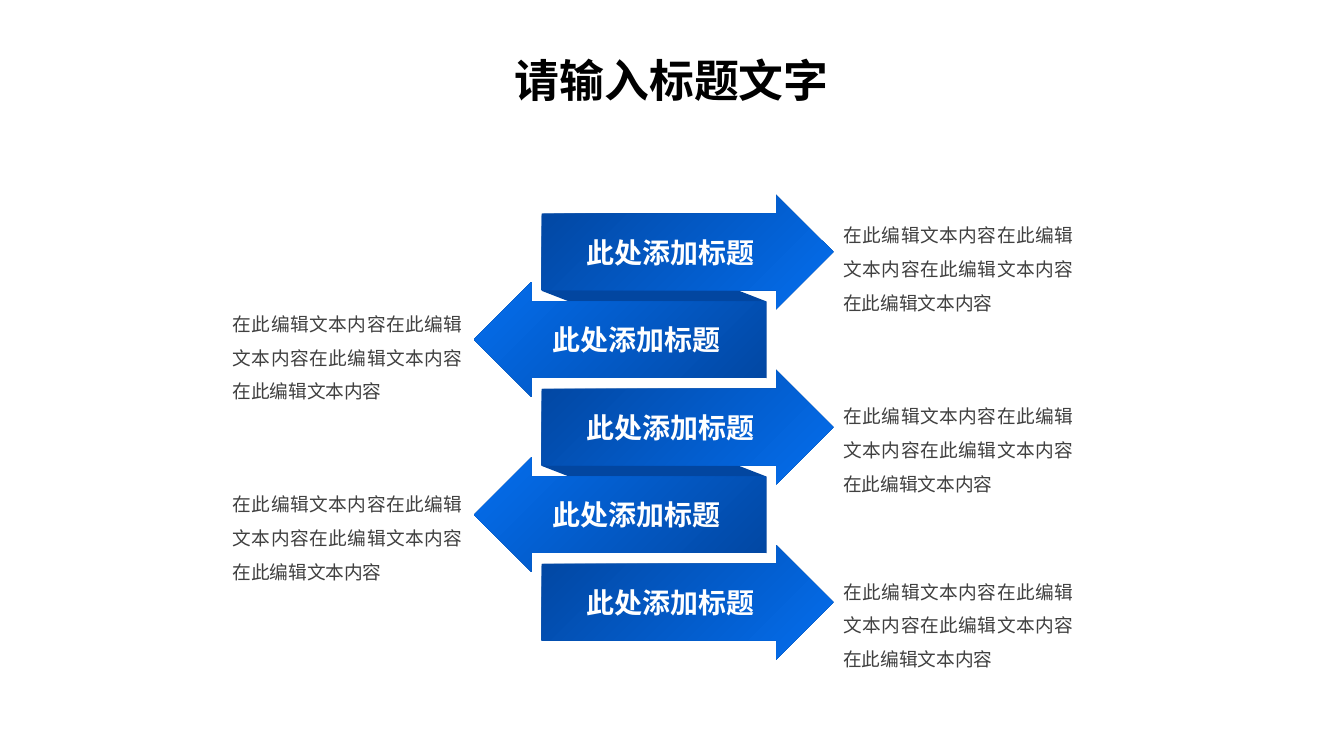
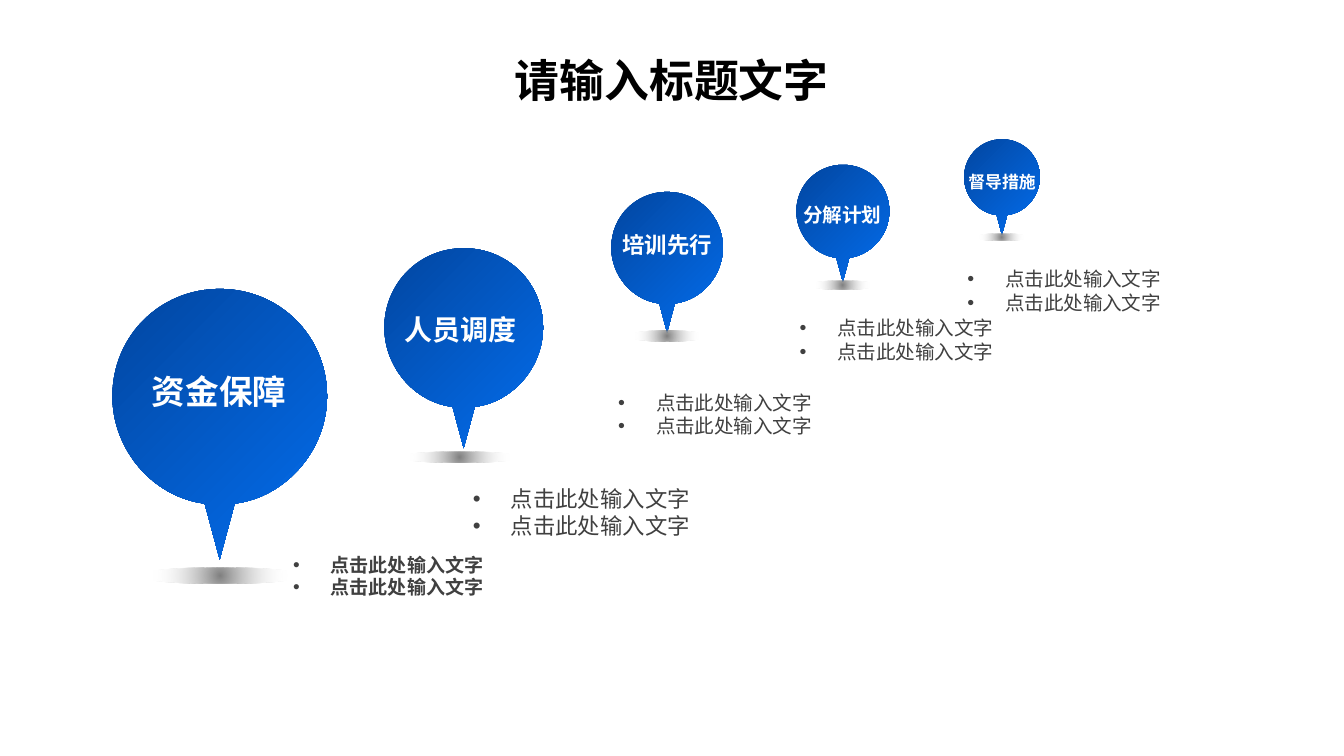
from itertools import zip_longest
from typing import NamedTuple

from lxml import etree
from pptx import Presentation
from pptx.dml.color import RGBColor
from pptx.enum.shapes import MSO_SHAPE
from pptx.enum.text import MSO_ANCHOR, MSO_AUTO_SIZE, PP_ALIGN
from pptx.oxml.ns import qn
from pptx.util import Pt

ARROW = MSO_SHAPE.RIGHT_ARROW
FOLD = MSO_SHAPE.PARALLELOGRAM
OVAL = MSO_SHAPE.OVAL
TOP = MSO_ANCHOR.TOP
GROW = MSO_AUTO_SIZE.SHAPE_TO_FIT_TEXT
LEFT, CENTER, FULL = PP_ALIGN.LEFT, PP_ALIGN.CENTER, PP_ALIGN.JUSTIFY

NAVY = RGBColor(0x02, 0x46, 0xA0)
BLUE = RGBColor(0x04, 0x6E, 0xEE)
GRAY = RGBColor(0x80, 0x80, 0x80)
DARK = RGBColor(0x40, 0x40, 0x40)
BLACK = RGBColor(0, 0, 0)
WHITE = RGBColor(0xFF, 0xFF, 0xFF)

FONT = "Noto Sans CJK SC"
TITLE = "请输入标题文字"
STEP = "此处添加标题"
NOTE = "在此编辑文本内容" * 4
ITEM = "点击此处输入文字"

ARROW_TOP, ARROW_GAP = 104.4, 46.9
NOTE_TOPS = (114.1, 161.6, 211, 258.2, 305)

# Right half of a pin from its top to its tail: two curves of three points
# each, in pin widths. The left half mirrors it.
HALF = ((0.28, 0), (0.5, 0.22), (0.5, 0.5),
        (0.5, 0.75), (0.31, 0.97), (0.07, 1))
TIP = (0, 1.26)
CURVES = (0, 3, 8, 11)  # first point of each curve along the outline


class Box(NamedTuple):
    left: float
    top: float
    width: float
    height: float

    def place(self) -> tuple:
        return tuple(Pt(v) for v in self)


class Style(NamedTuple):
    size: float
    color: RGBColor
    bold: bool = False
    align: PP_ALIGN = LEFT
    space: float = 1.0


class Side(NamedTuple):
    """Where the parts of a step sit, by the way its arrow points."""
    arrow: float
    label: float
    note: float
    turn: int


class Pin(NamedTuple):
    text: str
    size: float
    mid: float
    top: float
    width: float
    base: float  # middle of the label
    label: float
    shade: Box


class Points(NamedTuple):
    left: float
    top: float
    size: float
    bold: bool = False


RIGHT_SIDE = Side(290.2, 308.5, 451.8, 0)
LEFT_SIDE = Side(254, 290.2, 124.6, 180)

PINS = (
    Pin("资金保障", 18, 117.7, 154.8, 115, 117.4, 195.1, Box(73.4, 304.3, 89.3, 8.6)),
    Pin("人员调度", 15, 248.4, 133, 85, 246.7, 164, Box(213.1, 242.2, 66.2, 5.8)),
    Pin("培训先行", 12, 357.4, 102.8, 59.8, 357.5, 120.2, Box(336.2, 177.1, 42.5, 5.8)),
    Pin("分解计划", 10.5, 451.5, 88.3, 49.8, 451.3, 105.1, Box(433.7, 150.5, 35.3, 4.5)),
    Pin("督导措施", 9, 536.8, 74.6, 40.6, 536.8, 88.6, Box(522, 125.3, 28.8, 3.6)),
)

LISTS = (
    Points(149.8, 292.7, 10.2, True),
    Points(246.2, 256.3, 12),
    Points(324, 205.7, 10.5),
    Points(421.2, 165.8, 10.5),
    Points(511.2, 139.6, 10.5),
)


def add_text(para, text: str, style: Style) -> None:
    para.alignment = style.align
    para.line_spacing = style.space
    para.space_before = Pt(0)
    run = para.add_run()
    run.text = text
    font = run.font
    font.size, font.bold, font.name = Pt(style.size), style.bold, FONT
    font.color.rgb = style.color
    etree.SubElement(font._element, qn("a:ea"), typeface=FONT)


def add_dot(para) -> None:
    """Give the paragraph a bullet and a hanging indent."""
    props = para._p.get_or_add_pPr()
    props.set("marL", str(Pt(20.25)))
    props.set("indent", str(Pt(-20.25)))
    etree.SubElement(props, qn("a:buFont"), typeface="Arial")
    etree.SubElement(props, qn("a:buChar"), char="•")


def fill_frame(shape, lines: list[str], style: Style, wrap: bool = False,
               inset: bool = True, dots: bool = False) -> None:
    frame = shape.text_frame
    frame.word_wrap = wrap
    frame.auto_size = GROW
    frame.vertical_anchor = TOP
    if not inset:
        frame.margin_left = frame.margin_right = Pt(0)
        frame.margin_top = frame.margin_bottom = Pt(0)
    for i, line in enumerate(lines):
        para = frame.add_paragraph() if i else frame.paragraphs[0]
        add_text(para, line, style)
        if dots:
            add_dot(para)


def move(shape, box: Box) -> None:
    shape.left, shape.top, shape.width, shape.height = box.place()


def set_title(slide) -> None:
    title = slide.shapes.title
    move(title, Box(268.4, 24.8, 182.8, 36))
    fill_frame(title, [TITLE], Style(24, BLACK, True, CENTER))


def strip(shape) -> None:
    """Take away outline and shadow."""
    shape.line.fill.background()
    shape.shadow.inherit = False


def blend(shape, first: RGBColor, last: RGBColor) -> None:
    """Fill with a gradient that runs down to the right."""
    strip(shape)
    shape.fill.gradient()
    shape.fill.gradient_angle = 315
    for stop, color in zip(shape.fill.gradient_stops, (first, last)):
        stop.color.rgb = color


def add_shade(shapes, box: Box) -> None:
    """Draw a soft oval that fades out from its middle."""
    oval = shapes.add_shape(OVAL, *box.place())
    blend(oval, GRAY, WHITE)
    oval.fill.gradient_stops[1].position = 0.8
    grad = oval.element.spPr.find(qn("a:gradFill"))
    clear = grad.findall(".//" + qn("a:srgbClr"))[1]
    etree.SubElement(clear, qn("a:alpha"), val="0")
    line = grad.find(qn("a:lin"))
    ring = etree.Element(qn("a:path"), path="circle")
    sides = dict.fromkeys("ltrb", "50000")
    etree.SubElement(ring, qn("a:fillToRect"), sides)
    grad.replace(line, ring)


def add_fold(slide, top: float) -> None:
    fold = slide.shapes.add_shape(FOLD, *Box(306.7, top, 87.8, 120.2).place())
    fold.rotation = 270
    fold.adjustments[0] = 0.532
    strip(fold)
    fold.fill.solid()
    fold.fill.fore_color.rgb = NAVY


def add_step(slide, side: Side, top: float, note: float) -> None:
    shapes = slide.shapes
    arrow = shapes.add_shape(ARROW, *Box(side.arrow, top, 156.2, 61.2).place())
    arrow.rotation = side.turn
    arrow.adjustments[0], arrow.adjustments[1] = 0.67, 0.5
    blend(arrow, NAVY, BLUE)
    label = shapes.add_textbox(*Box(side.label, top + 21.6, 101.5, 18).place())
    fill_frame(label, [STEP], Style(15, WHITE, True, CENTER), True, False)
    text = shapes.add_textbox(*Box(side.note, note, 123.1, 54.7).place())
    fill_frame(text, [NOTE], Style(10, DARK, False, FULL, 1.5), True, False)


def bend(shape) -> None:
    """Join the line steps of each curve into one Bezier step."""
    steps = shape.element.findall(".//" + qn("a:lnTo"))
    for start in CURVES:
        trio = steps[start:start + 3]
        curve = etree.Element(qn("a:cubicBezTo"))
        trio[0].addprevious(curve)
        for step in trio:
            curve.append(step[0])
            step.getparent().remove(step)


def add_pin(slide, pin: Pin) -> None:
    shapes = slide.shapes.add_group_shape().shapes
    mirror = tuple((-x, y) for x, y in reversed(HALF))
    dots = [(Pt(pin.mid + x * pin.width), Pt(pin.top + y * pin.width))
            for x, y in (*HALF, TIP, *mirror, (0, 0))]
    outline = shapes.build_freeform(*dots[-1])
    outline.add_line_segments(dots)
    drop = outline.convert_to_shape()
    bend(drop)
    blend(drop, NAVY, BLUE)
    add_shade(shapes, pin.shade)
    width = 4 * pin.size + 17
    box = Box(pin.base - width / 2, pin.label, width, 1.2 * pin.size + 7.2)
    label = shapes.add_textbox(*box.place())
    fill_frame(label, [pin.text], Style(pin.size, WHITE, True, CENTER))


def add_lists(slide) -> None:
    """Fill the body placeholders, then text boxes for the lists left over."""
    bodies = [p for p in slide.placeholders if 1 <= p.placeholder_format.idx <= 4]
    for points, body in zip_longest(LISTS, bodies):
        box = Box(points.left, points.top, 8 * points.size + 36, 3 * points.size)
        body = body or slide.shapes.add_textbox(*box.place())
        move(body, box)
        style = Style(points.size, DARK, points.bold)
        fill_frame(body, [ITEM] * 2, style, dots=True)


def draw_steps(deck) -> None:
    slide = deck.slides.add_slide(deck.slide_layouts.get_by_name("Title Only"))
    set_title(slide)
    for i in (1, 0):
        add_fold(slide, 98.6 + 2 * ARROW_GAP * i)
    for i, note in enumerate(NOTE_TOPS):
        side = LEFT_SIDE if i % 2 else RIGHT_SIDE
        add_step(slide, side, ARROW_TOP + ARROW_GAP * i, note)


def draw_pins(deck) -> None:
    slide = deck.slides.add_slide(deck.slide_layouts.get_by_name("Comparison"))
    set_title(slide)
    add_lists(slide)
    for pin in PINS:
        add_pin(slide, pin)


def main() -> None:
    deck = Presentation()
    deck.slide_width, deck.slide_height = Pt(720), Pt(405)
    draw_steps(deck)
    draw_pins(deck)
    deck.save("out.pptx")


if __name__ == "__main__":
    main()
